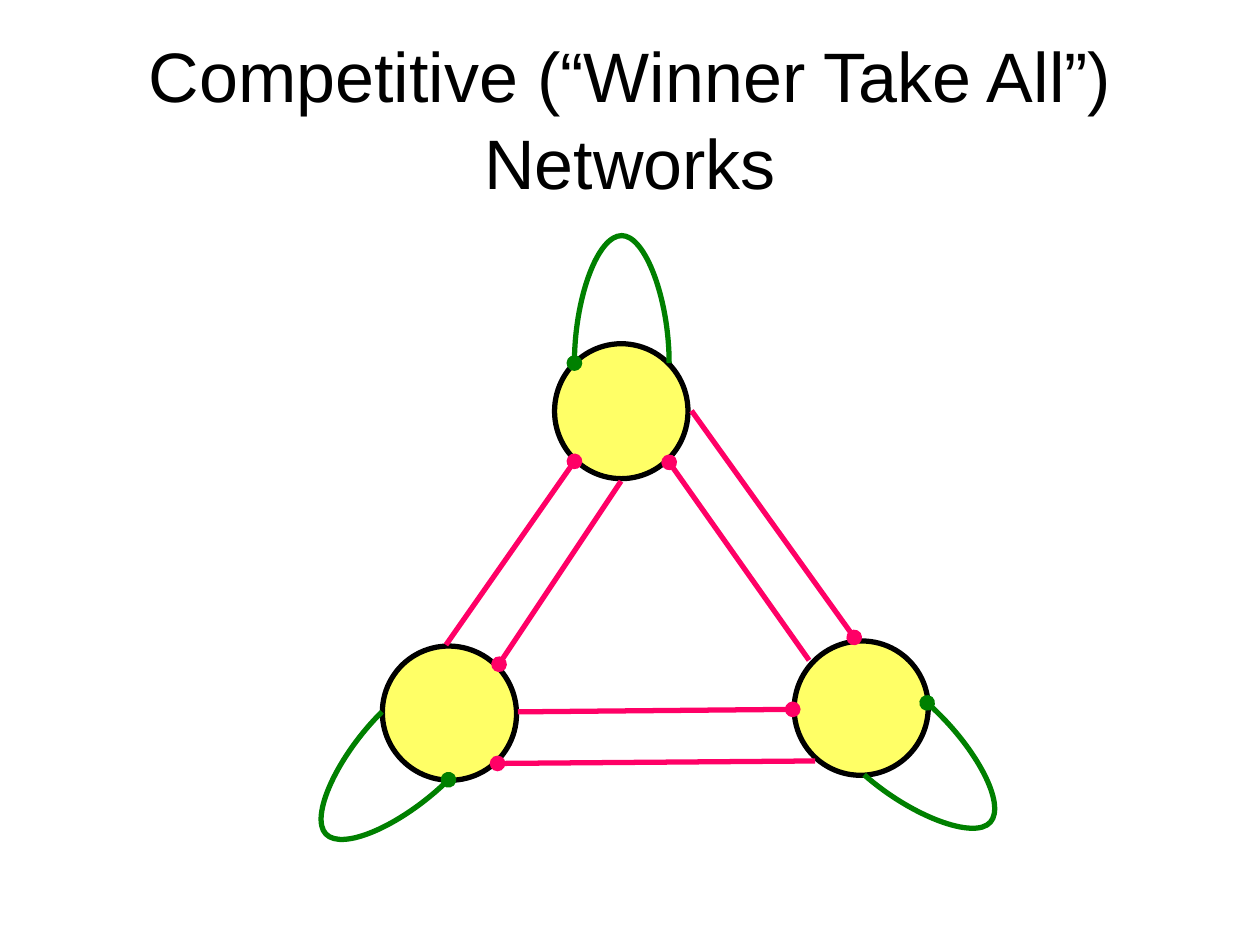
from lxml.etree import SubElement
from pptx import Presentation
from pptx.dml.color import RGBColor
from pptx.enum.shapes import MSO_CONNECTOR, MSO_SHAPE
from pptx.enum.text import MSO_ANCHOR, PP_ALIGN
from pptx.oxml.ns import qn
from pptx.util import Cm, Pt

COLORS = {"text": "000000", "node": "FFFF66", "outline": "000000",
          "excite": "008000", "inhibit": "FF0066"}


def write_text(shape, text, *, size, color, font="Arial", align=PP_ALIGN.CENTER,
               anchor=MSO_ANCHOR.MIDDLE, spacing=1.0):
    frame = shape.text_frame
    frame.word_wrap = True
    frame.vertical_anchor = anchor
    para = frame.paragraphs[0]
    para.alignment = align
    para.line_spacing = spacing
    span = para.add_run()
    span.text = text
    span.font.name = font
    span.font.size = Pt(size)
    span.font.color.rgb = RGBColor.from_string(color)


def style_line(shape, color, oval_end=True):
    """Give a 3 pt line without shadow, with an oval at its end if wanted."""
    shape.line.color.rgb = RGBColor.from_string(color)
    shape.line.width = Pt(3)
    if oval_end:
        SubElement(shape.get_or_add_ln(), qn("a:tailEnd"), type="oval")
    properties = shape._element.spPr
    if properties.find(qn("a:effectLst")) is None:
        SubElement(properties, qn("a:effectLst"))


deck = Presentation()
deck.slide_width, deck.slide_height = Cm(25.4), Cm(19.05)
page = deck.slides.add_slide(deck.slide_layouts[5])

title = page.shapes.title
title.left, title.top, title.width, title.height = Cm(1.27), Cm(0.76), Cm(22.86), Cm(3.18)
write_text(title, "Competitive (“Winner Take All”) Networks",
           size=40, color=COLORS["text"], spacing=1.04)

# Each neuron: box, rotation, then its self-loop as start, end and reach
neurons = [
    ((11.18, 6.93, 2.69, 2.72), 0, (13.49, 7.32), (11.58, 7.32), (0, -2.57)),
    ((7.7, 13.03, 2.72, 2.69), 225.6, (7.7, 14.35), (9.04, 15.72), (-1.8, 1.78)),
    ((16, 12.93, 2.72, 2.69), 131.5, (17.42, 15.62), (18.69, 14.17), (1.91, 1.68)),
]
# Position of each Bezier point: share of the way to the end, share of the reach
loop_points = [(0, 0.5), (0.25, 1), (0.5, 1), (0.75, 1), (1, 0.5), (1, 0)]

for box, rotation, start, end, reach in neurons:
    neuron = page.shapes.add_shape(MSO_SHAPE.FLOWCHART_CONNECTOR, *map(Cm, box))
    neuron.rotation = rotation
    neuron.shadow.inherit = False
    neuron.fill.solid()
    neuron.fill.fore_color.rgb = RGBColor.from_string(COLORS["node"])
    style_line(neuron, COLORS["outline"], oval_end=False)

    points = [tuple(Cm(s + along * (e - s) + out * r)
                    for s, e, r in zip(start, end, reach))
              for along, out in loop_points]
    builder = page.shapes.build_freeform(Cm(start[0]), Cm(start[1]))
    builder.add_line_segments(points, close=False)
    loop = builder.convert_to_shape()
    loop.shadow.inherit = False
    loop.fill.background()
    style_line(loop, COLORS["excite"])

    # Turn every three straight segments into one cubic curve
    segments = list(loop._element.iter(qn("a:lnTo")))
    outline = segments[0].getparent()
    for first in range(0, len(segments), 3):
        curve = SubElement(outline, qn("a:cubicBezTo"))
        for segment in segments[first:first + 3]:
            curve.append(segment[0])
            outline.remove(segment)

links = [
    ((13.94, 8.28), (17.22, 12.85)),
    ((10.44, 14.35), (15.98, 14.3)),
    ((16.31, 13.31), (13.49, 9.32)),
    ((12.52, 9.7), (10.06, 13.39)),
    ((8.99, 13), (11.58, 9.3)),
    ((16.43, 15.34), (10.03, 15.39)),
]
for start, end in links:
    link = page.shapes.add_connector(MSO_CONNECTOR.STRAIGHT, *map(Cm, start + end))
    style_line(link, COLORS["inhibit"])

deck.save("out.pptx")
